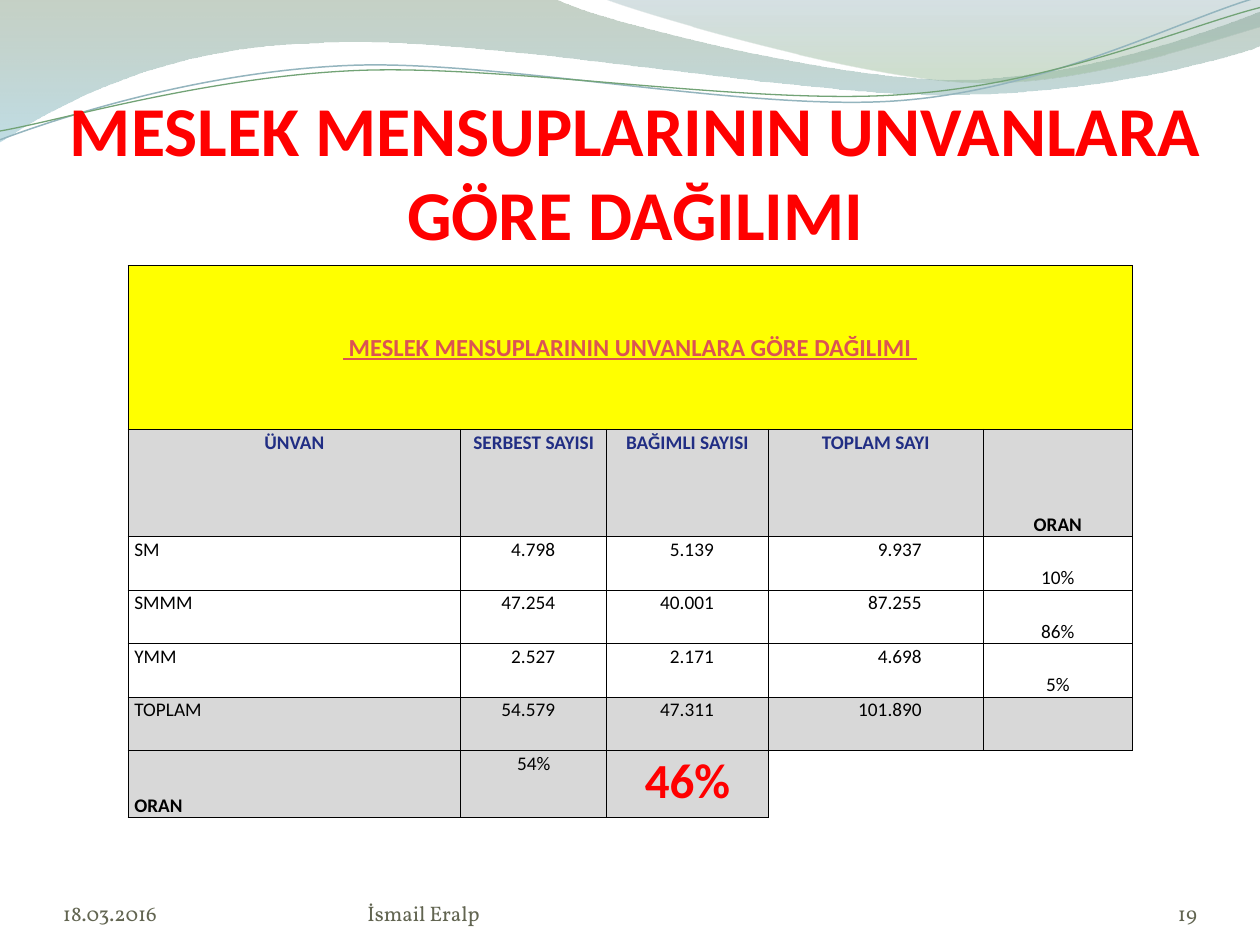
from pptx import Presentation
from pptx.dml.color import RGBColor
from pptx.enum.text import MSO_ANCHOR, PP_ALIGN
from pptx.oxml import parse_xml
from pptx.oxml.ns import nsdecls
from pptx.util import Inches, Pt

LEFT, CENTER, RIGHT = PP_ALIGN.LEFT, PP_ALIGN.CENTER, PP_ALIGN.RIGHT
TOP, MIDDLE, BOTTOM = MSO_ANCHOR.TOP, MSO_ANCHOR.MIDDLE, MSO_ANCHOR.BOTTOM
WIDTH, HEIGHT = Inches(10), Inches(7.5)
HEADING = "MESLEK MENSUPLARININ UNVANLARA GÖRE DAĞILIMI"
BODY_FONT, FOOTER_FONT = "Calibri", "Vollkorn"
BLACK, RED, NAVY, GREY, YELLOW = "000000", "FF0000", "212E84", "D8D8D8", "FFFF00"

COLUMNS = [2.64, 1.16, 1.28, 1.71, 1.18]
ROWS = [1.3, 0.85] + [0.425] * 4 + [0.53]
NUMBER_INSETS = [0, 0.41, 0.43, 0.49]
HEADERS = ["ÜNVAN", "SERBEST SAYISI", "BAĞIMLI SAYISI", "TOPLAM SAYI", "ORAN"]
COUNTS = [
    ["SM", "4.798", "5.139", "9.937", "10%"],
    ["SMMM", "47.254", "40.001", "87.255", "86%"],
    ["YMM", "2.527", "2.171", "4.698", "5%"],
    ["TOPLAM", "54.579", "47.311", "101.890", ""],
]

BANDS = [
    ([(0, 0), (4.4, -0.01), (4.76, 0.17, 6.64, 0.63, 7.58, 0.63),
      (8.53, 0.63, 9.58, 0.26, 10, 0.09), (10.01, 0.36),
      (9.83, 0.44, 8.7, 0.76, 7.46, 0.75), (6.22, 0.75, 3.82, 0.28, 2.57, 0.34),
      (1.29, 0.36, 0.46, 0.83, -0.01, 1.13), (0, 0)],
     [(0, "809980", 45), (1, "8DC1CF", 55)]),
    ([(4.79, -0.01), (5.09, 0.11, 6.82, 0.62, 7.69, 0.65),
      (8.56, 0.69, 9.61, 0.32, 10, 0.21), (10, 0), (4.79, -0.01)],
     [(0, "779BA4", 30), (0.8, "96B996", 45)]),
]
STRANDS = [
    ([(0, 1.11), (0.48, 0.93, 1.58, 0.57, 2.77, 0.52),
      (3.95, 0.47, 5.93, 0.89, 7.13, 0.8), (8.33, 0.71, 9.38, 0.15, 9.98, -0.02)],
     "94B5BE", 0.85),
    ([(0, 1.04), (0.47, 0.96, 1.64, 0.61, 2.83, 0.56),
      (4.03, 0.51, 5.97, 0.84, 7.17, 0.75), (8.36, 0.67, 9.41, 0.21, 10, 0.06)],
     "72A376", 0.75),
]


def color(value):
    """Turn a hex string into a colour."""
    return RGBColor.from_string(value)


def across(percent):
    """Return a percentage of the slide width."""
    return round(WIDTH * percent / 100)


def down(percent):
    """Return a percentage of the slide height."""
    return round(HEIGHT * percent / 100)


def add_curve(slide, steps, close):
    """Add a freeform of straight steps (x, y) and cubic steps (three points)."""
    points = [(Inches(x), Inches(y)) for step in steps for x, y in zip(step[::2], step[1::2])]
    builder = slide.shapes.build_freeform(*points[0])
    builder.add_line_segments(points[1:], close=close)
    shape = builder.convert_to_shape()
    shape.shadow.inherit = False
    segments = iter(shape._element.xpath(".//a:path/a:lnTo"))
    for step in steps[1:]:
        group = [next(segments) for _ in step[::2]]
        if len(group) == 3:
            cubic = parse_xml(f'<a:cubicBezTo {nsdecls("a")}/>')
            group[0].addprevious(cubic)
            for segment in group:
                cubic.append(segment[0])
                segment.getparent().remove(segment)
    return shape


def add_band(slide, steps, stops):
    """Add a wave filled with a translucent vertical gradient."""
    shape = add_curve(slide, steps, True)
    shape.line.fill.background()
    shape.fill.gradient()
    shape.fill.gradient_angle = 270
    for stop, (position, value, _) in zip(shape.fill.gradient_stops, stops):
        stop.position = position
        stop.color.rgb = color(value)
    for element, (_, _, opacity) in zip(shape._element.xpath(".//a:gs/a:srgbClr"), stops):
        element.append(parse_xml(f'<a:alpha {nsdecls("a")} val="{opacity * 1000}"/>'))


def add_strand(slide, steps, value, width):
    """Add a thin curved line."""
    shape = add_curve(slide, steps, False)
    shape.fill.background()
    shape.line.color.rgb = color(value)
    shape.line.width = Pt(width)


def style_paragraph(paragraph, text, size, value, align, bold=False, font=BODY_FONT):
    """Write a paragraph in one font."""
    if text:
        paragraph.text = text
    paragraph.alignment = align
    paragraph.font.name = font
    paragraph.font.size = Pt(size)
    paragraph.font.bold = bold
    paragraph.font.color.rgb = color(value)


def add_text(slide, box, text, size, value, align, top_inset=0, **style):
    """Add a wrapping text box anchored at its bottom."""
    left, top, width, height = box
    shape = slide.shapes.add_textbox(across(left), down(top), across(width), down(height))
    frame = shape.text_frame
    frame.word_wrap = True
    frame.vertical_anchor = BOTTOM
    frame.margin_left = frame.margin_right = frame.margin_bottom = 0
    frame.margin_top = Inches(top_inset)
    style_paragraph(frame.paragraphs[0], text, size, value, align, **style)


def set_borders(cell, sides="LRTB"):
    """Draw the named sides of a cell and clear the others."""
    properties = cell._tc.get_or_add_tcPr()
    for index, side in enumerate("LRTB"):
        paint = f'<a:solidFill><a:srgbClr val="{BLACK}"/></a:solidFill>' if side in sides else "<a:noFill/>"
        properties.insert(index, parse_xml(
            f'<a:ln{side} {nsdecls("a")} w="{Pt(0.5)}">{paint}</a:ln{side}>'))


def fill_cell(cell, text, align=CENTER, anchor=TOP, fill=None, size=11, value=BLACK,
              bold=False, left=0.01, right=0.01, sides="LRTB"):
    """Write and style one table cell."""
    cell.margin_left, cell.margin_right = Inches(left), Inches(right)
    cell.margin_top, cell.margin_bottom = Inches(0.01), 0
    cell.vertical_anchor = anchor
    if fill:
        cell.fill.solid()
        cell.fill.fore_color.rgb = color(fill)
    else:
        cell.fill.background()
    set_borders(cell, sides)
    style_paragraph(cell.text_frame.paragraphs[0], text, size, value, align, bold)


def add_title_table(slide):
    """Add the table of members by title."""
    frame = slide.shapes.add_table(len(ROWS), len(COLUMNS), across(10.16), down(28.1),
                                   Inches(sum(COLUMNS)), Inches(sum(ROWS)))
    table = frame.table
    table.first_row = table.horz_banding = False
    for column, width in zip(table.columns, COLUMNS):
        column.width = Inches(width)
    for row, height in zip(table.rows, ROWS):
        row.height = Inches(height)

    for index, header in enumerate(HEADERS):
        fill_cell(table.cell(0, index), "" if index else f" {HEADING} ", anchor=MIDDLE,
                  fill=YELLOW, size=14, value="DB5353", bold=True)
        last = header == "ORAN"
        fill_cell(table.cell(1, index), header, anchor=BOTTOM if last else TOP,
                  fill=GREY, value=BLACK if last else NAVY, bold=True)
    table.cell(0, 0).text_frame.paragraphs[0].font.underline = True
    table.cell(0, 0).merge(table.cell(0, len(COLUMNS) - 1))

    for row, (name, *numbers, share) in enumerate(COUNTS, 2):
        fill = GREY if name == "TOPLAM" else None
        fill_cell(table.cell(row, 0), name, LEFT, fill=fill, left=0.05)
        for column, number in enumerate(numbers, 1):
            fill_cell(table.cell(row, column), number, RIGHT, fill=fill, right=NUMBER_INSETS[column])
        fill_cell(table.cell(row, 4), share, anchor=BOTTOM, fill=fill)

    fill_cell(table.cell(6, 0), "ORAN", LEFT, BOTTOM, GREY, bold=True, left=0.05)
    fill_cell(table.cell(6, 1), "54%", fill=GREY)
    fill_cell(table.cell(6, 2), "46%", fill=GREY, size=28, value=RED, bold=True)
    fill_cell(table.cell(6, 3), "", sides="LT")
    fill_cell(table.cell(6, 4), "", sides="T")


def main():
    """Build the slide and save it."""
    presentation = Presentation()
    presentation.slide_width, presentation.slide_height = WIDTH, HEIGHT
    slide = presentation.slides.add_slide(presentation.slide_layouts[6])
    for band in BANDS:
        add_band(slide, *band)
    for strand in STRANDS:
        add_strand(slide, *strand)
    add_text(slide, (5, 10.27, 90.83, 16.67), HEADING, 40, RED, CENTER, top_inset=0.05, bold=True)
    add_title_table(slide)
    for left, width, text, align in [(86.67, 8.33, "19", RIGHT), (5, 23.33, "18.03.2016", LEFT),
                                     (29.17, 36.67, "İsmail Eralp", LEFT)]:
        add_text(slide, (left, 92.67, width, 5.33), text, 12, "626551", align, font=FOOTER_FONT)
    presentation.save("out.pptx")


if __name__ == "__main__":
    main()
